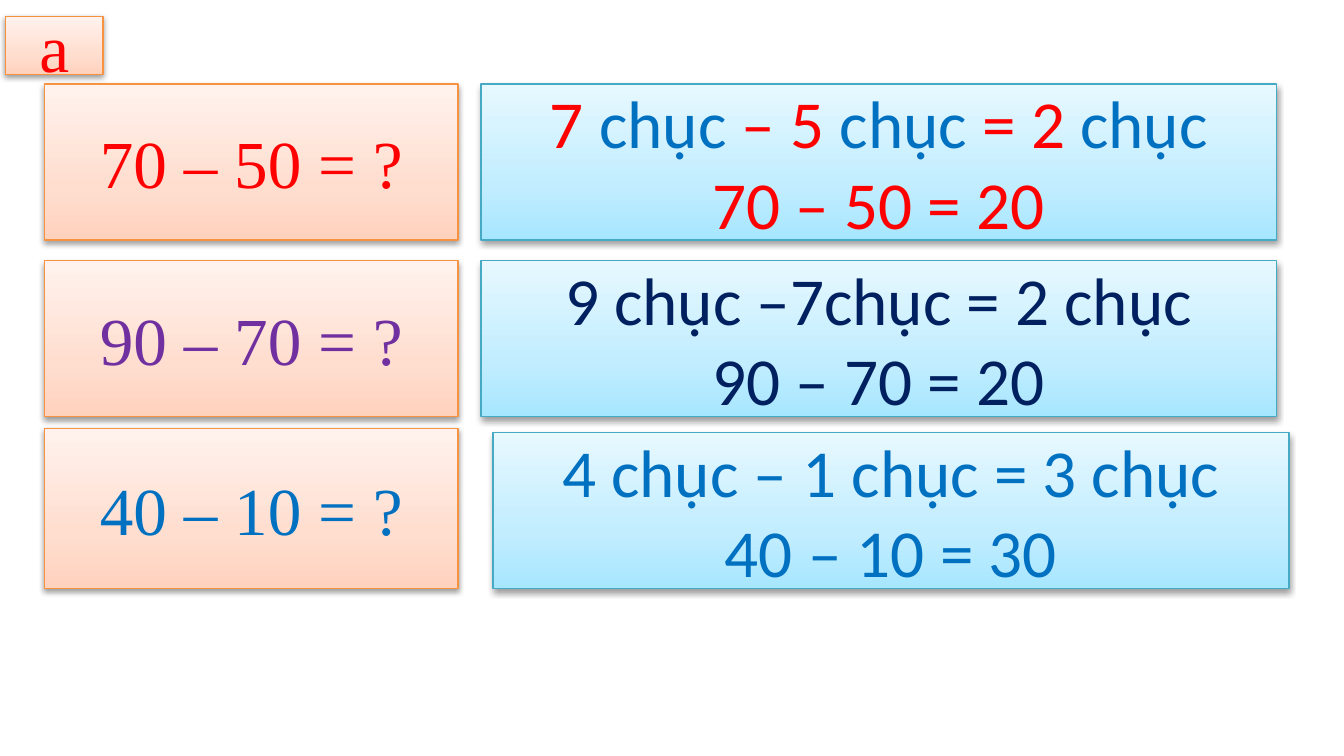
from copy import deepcopy

from lxml.etree import SubElement
from pptx import Presentation
from pptx.dml.color import RGBColor
from pptx.enum.shapes import MSO_SHAPE as SHAPE
from pptx.enum.text import MSO_ANCHOR as ANCHOR, PP_ALIGN as ALIGN
from pptx.oxml.ns import qn
from pptx.util import Cm, Pt

COLORS = {
    "red": "FF0000",
    "blue": "0070C0",
    "navy": "002060",
    "purple": "7030A0",
    "shadow": "000000",
    "orange_line": "F69240",
    "orange_dark": "FFD2BD",
    "orange_mid": "FFDED0",
    "orange_light": "FFF2ED",
    "aqua_line": "46AAC5",
    "aqua_dark": "A7E6FF",
    "aqua_mid": "C1EDFF",
    "aqua_light": "E7F8FF",
}
STOPS = {"dark": 0, "mid": 0.35, "light": 1}
FONTS = {"orange": "Times New Roman", "aqua": "Calibri"}
SHADOW = {"blurRad": "40000", "dist": "20000", "dir": "5400000", "rotWithShape": "0"}

QUESTION_LEFT, QUESTION_WIDTH = 0.84, 7.82
ANSWER_WIDTH, ANSWER_HEIGHT = 15.04, 2.95

QUESTIONS = [
    (1.59, 2.95, "70 – 50 = ?", "red"),
    (4.93, 2.95, "90 – 70 = ?", "purple"),
    (8.1, 3.02, "40 – 10 = ?", "blue"),
]
ANSWERS = [
    (9.09, 1.59, [
        [("7 ", "red"), ("chục", "blue"), (" – 5 ", "red"),
         ("chục", "blue"), (" = 2 ", "red"), ("chục", "blue")],
        [("70 – 50 = 20", "red")],
    ]),
    (9.09, 4.93, [[("9 chục –7chục = 2 chục", "navy")], [("90 – 70 = 20", "navy")]]),
    (9.32, 8.18, [[("4 chục – 1 chục = 3 chục", "blue")], [("40 – 10 = 30", "blue")]]),
]


def rgb(name):
    """Return the named colour."""
    return RGBColor.from_string(COLORS[name])


def set_gradient(sp, theme):
    """Fill a shape with the three-stop gradient of its theme, rising upwards."""
    sp.fill.gradient()
    sp.fill.gradient_angle = 90
    gs_list = sp.element.spPr.find(".//" + qn("a:gsLst"))
    gs_list.append(deepcopy(gs_list[-1]))
    for stop, (shade, position) in zip(sp.fill.gradient_stops, STOPS.items()):
        stop.color.rgb = rgb(f"{theme}_{shade}")
        stop.position = position


def set_shadow(sp):
    """Give a shape a soft shadow below it."""
    sp.shadow.inherit = False
    effects = sp.element.spPr.find(qn("a:effectLst"))
    outer = SubElement(effects, qn("a:outerShdw"), SHADOW)
    color = SubElement(outer, qn("a:srgbClr"), val=COLORS["shadow"])
    SubElement(color, qn("a:alpha"), val="38000")


def add_text(sp, lines, font_name):
    """Write centred lines of coloured runs into a shape."""
    tf = sp.text_frame
    tf.word_wrap = True
    tf.vertical_anchor = ANCHOR.MIDDLE
    for i, line in enumerate(lines):
        p = tf.add_paragraph() if i else tf.paragraphs[0]
        p.alignment = ALIGN.CENTER
        for text, color in line:
            r = p.add_run()
            r.text = text
            for key, value in {"name": font_name, "size": Pt(36)}.items():
                setattr(r.font, key, value)
            r.font.color.rgb = rgb(color)


def add_box(s, theme, box, lines):
    """Add a gradient rectangle with text, placed in centimetres."""
    sp = s.shapes.add_shape(SHAPE.RECTANGLE, *map(Cm, box))
    set_gradient(sp, theme)
    sp.line.color.rgb = rgb(f"{theme}_line")
    sp.line.width = Pt(0.75)
    set_shadow(sp)
    add_text(sp, lines, FONTS[theme])


def main():
    """Build the subtraction slide."""
    prs = Presentation()
    prs.slide_width, prs.slide_height = Cm(25.4), Cm(14.29)
    s = prs.slides.add_slide(prs.slide_layouts[6])
    for top, height, text, color in QUESTIONS:
        add_box(s, "orange", (QUESTION_LEFT, top, QUESTION_WIDTH, height), [[(text, color)]])
    for left, top, lines in ANSWERS:
        add_box(s, "aqua", (left, top, ANSWER_WIDTH, ANSWER_HEIGHT), lines)
    add_box(s, "orange", (0.1, 0.31, 1.85, 1.1), [[("a", "red")]])
    prs.save("out.pptx")


if __name__ == "__main__":
    main()
